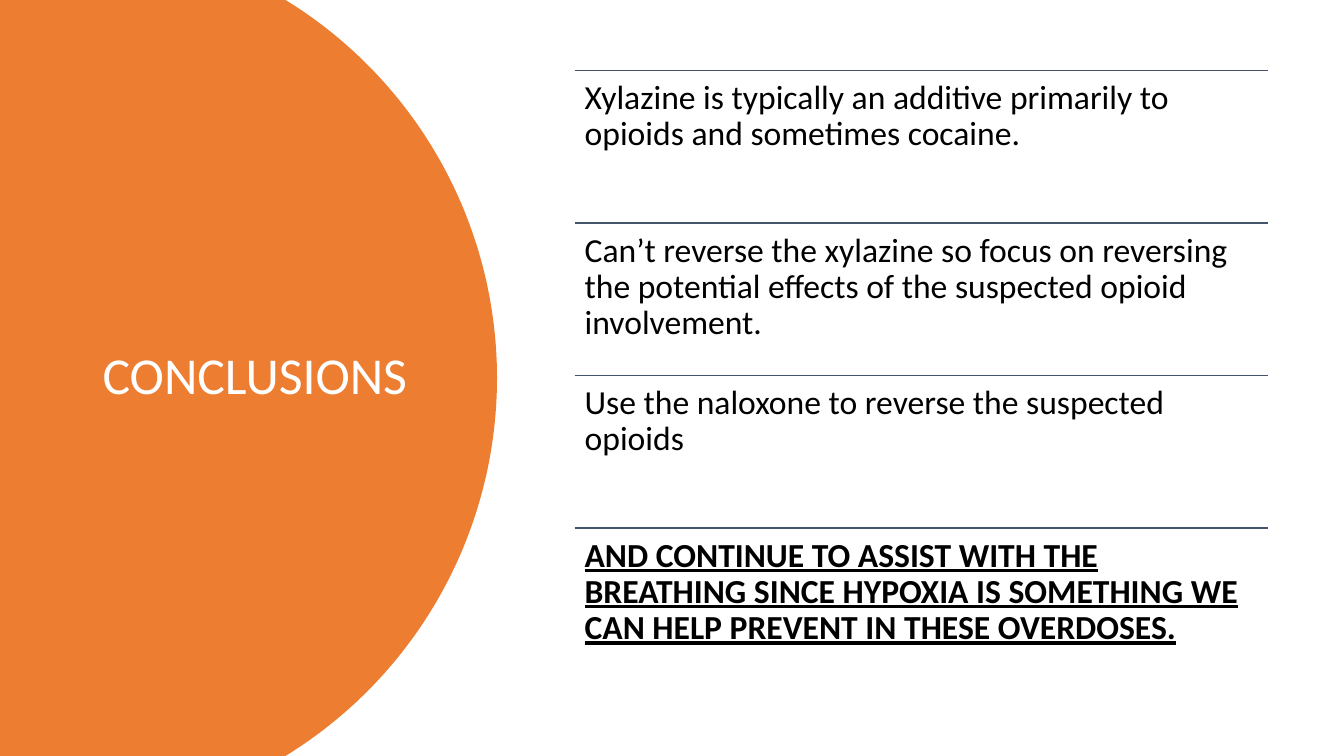
import math

from lxml import etree
from pptx import Presentation
from pptx import util as u
from pptx.dml.color import RGBColor
from pptx.enum import shapes, text
from pptx.oxml.ns import qn

PX = 9144
WIDTH, HEIGHT = 1333, 750
ORANGE, SLATE, WHITE, BLACK = "ED7D31", "44546A", "FFFFFF", "000000"
CONCLUSIONS = [
    "Xylazine is typically an additive primarily to opioids and sometimes cocaine.",
    "Can’t reverse the xylazine so focus on reversing the potential effects of the suspected opioid involvement.",
    "Use the naloxone to reverse the suspected opioids",
    "AND CONTINUE TO ASSIST WITH THE BREATHING SINCE HYPOXIA IS SOMETHING WE CAN HELP PREVENT IN THESE OVERDOSES.",
]


def px(value):
    return u.Emu(round(value * PX))


def color(value):
    return RGBColor.from_string(value)


def add_round_panel(slide, center_x, radius, fill, steps=120):
    middle = HEIGHT / 2
    limit = math.asin(middle / radius)
    angles = [limit * (2 * step / steps - 1) for step in range(steps + 1)]
    arc = [
        (px(center_x + radius * math.cos(angle)), px(middle + radius * math.sin(angle)))
        for angle in angles
    ]
    builder = slide.shapes.build_freeform(0, 0, scale=1.0)
    builder.add_line_segments(arc + [(0, px(HEIGHT))], close=True)
    shape = builder.convert_to_shape()
    shape.shadow.inherit = False
    shape.fill.solid()
    shape.fill.fore_color.rgb = color(fill)
    shape.line.fill.background()


def add_text(slide, box, content, size, ink, anchor, inset_y, emphasis=False):
    shape = slide.shapes.add_textbox(*map(px, box))
    frame = shape.text_frame
    frame.word_wrap = True
    frame.vertical_anchor = anchor
    frame.margin_left = frame.margin_right = px(10)
    frame.margin_top = frame.margin_bottom = px(inset_y)
    paragraph = frame.paragraphs[0]
    paragraph.text = content
    paragraph.line_spacing = 0.9
    paragraph.font.name = "Calibri"
    paragraph.font.size = u.Pt(size)
    paragraph.font.color.rgb = color(ink)
    if emphasis:
        paragraph.font.bold = True
        paragraph.font.underline = True


def add_rule(slide, left, top, width):
    line = slide.shapes.add_connector(
        shapes.MSO_CONNECTOR.STRAIGHT, px(left), px(top), px(left + width), px(top)
    )
    line.line.color.rgb = color(SLATE)
    line.line.width = u.Pt(1)
    etree.SubElement(line._element.spPr, qn("a:effectLst"))


def main():
    presentation = Presentation()
    presentation.slide_width = px(WIDTH)
    presentation.slide_height = px(HEIGHT)
    slide = presentation.slides.add_slide(presentation.slide_layouts[6])

    add_round_panel(slide, 53, 440, ORANGE)
    add_text(slide, (92, 70, 323, 609), "CONCLUSIONS", 37, WHITE,
             text.MSO_ANCHOR.MIDDLE, 5)

    left, top, width, bottom = 570, 70, 688, 675
    row_height = (bottom - top) / len(CONCLUSIONS)
    for row, conclusion in enumerate(CONCLUSIONS):
        row_top = top + row * row_height
        add_rule(slide, left, row_top, width)
        add_text(slide, (left, row_top, width, row_height), conclusion, 24, BLACK,
                 text.MSO_ANCHOR.TOP, 10, emphasis=row == len(CONCLUSIONS) - 1)

    presentation.save("out.pptx")


if __name__ == "__main__":
    main()
